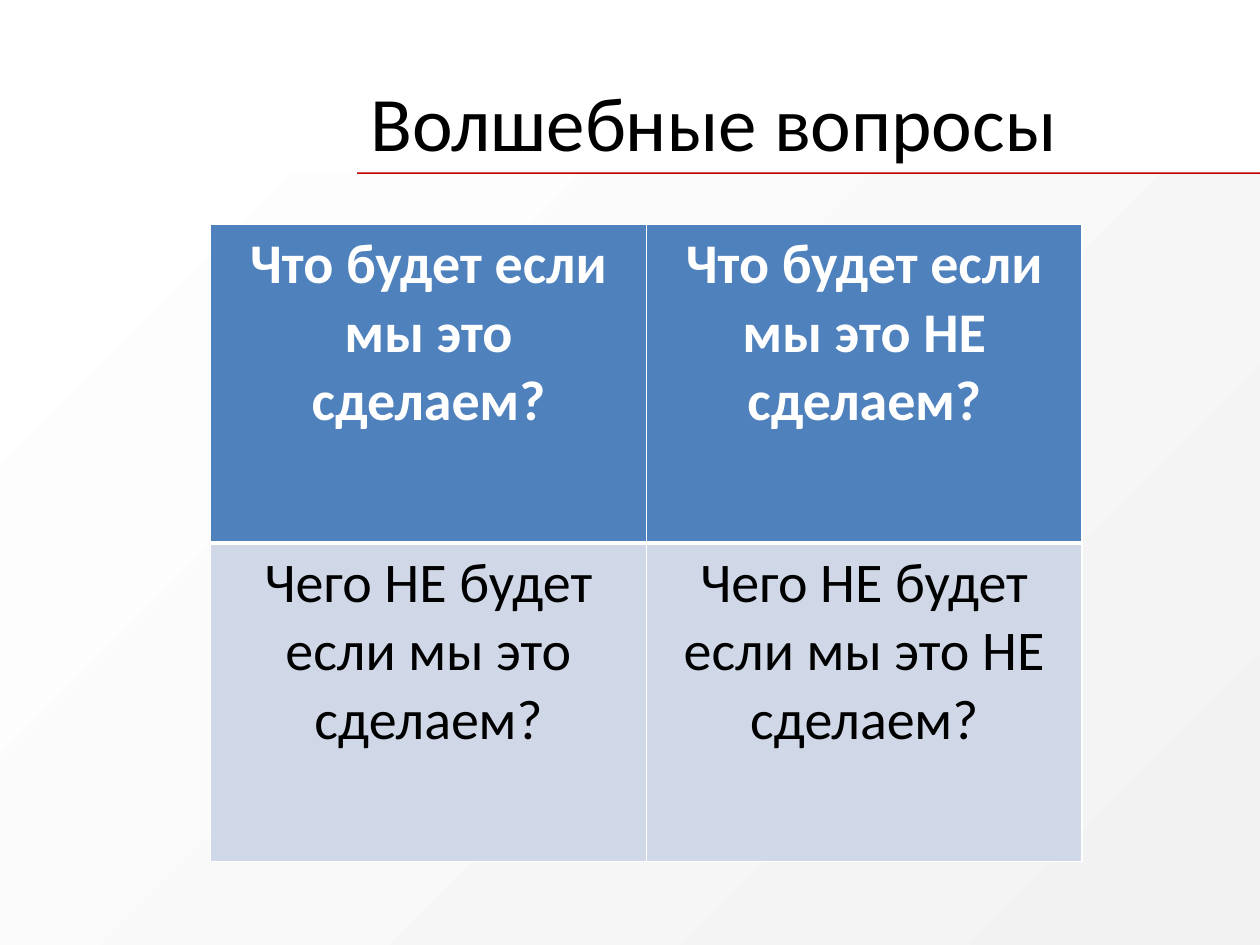
from lxml.etree import SubElement
from pptx import Presentation
from pptx.dml.color import RGBColor
from pptx.enum.shapes import MSO_SHAPE
from pptx.enum.text import MSO_ANCHOR, PP_ALIGN
from pptx.oxml.ns import qn
from pptx.util import Pt

QUESTIONS = [
    ["Что будет если мы это сделаем?", "Что будет если мы это НЕ сделаем?"],
    ["Чего НЕ будет если мы это сделаем?", "Чего НЕ будет если мы это НЕ сделаем?"],
]
ROW_STYLES = [("4F81BD", "FFFFFF", True), ("D0D8E8", "000000", False)]


def colour(value):
    """Turn a hex string into a colour."""
    return RGBColor.from_string(value)


def write(frame, text, size, ink, bold=False):
    """Write one centred run into a text frame."""
    paragraph = frame.paragraphs[0]
    paragraph.alignment = PP_ALIGN.CENTER
    run = paragraph.add_run()
    run.text = text
    run.font.name = "Calibri"
    run.font.size = Pt(size)
    run.font.bold = bold
    run.font.color.rgb = colour(ink)


def add_band(slide, box):
    """Add a plain rectangle without line or shadow."""
    band = slide.shapes.add_shape(MSO_SHAPE.RECTANGLE, *map(Pt, box))
    band.shadow.inherit = False
    band.line.fill.background()
    return band


def add_backdrop(slide, box):
    """Shade the lower part of the slide diagonally."""
    fill = add_band(slide, box).fill
    fill.gradient()
    fill.gradient_angle = 315
    for stop, shade in zip(fill.gradient_stops, ("FFFFFF", "F2F2F2")):
        stop.color.rgb = colour(shade)


def add_title_rule(slide, box):
    """Draw the red rule under the title."""
    fill = add_band(slide, box).fill
    fill.solid()
    fill.fore_color.rgb = colour("C00000")


def place_title(slide, box, text):
    """Place and format the title placeholder."""
    title = slide.shapes.title
    title.left, title.top, title.width, title.height = map(Pt, box)
    title.text_frame.word_wrap = True
    title.text_frame.vertical_anchor = MSO_ANCHOR.MIDDLE
    write(title.text_frame, text, 44, "000000")


def add_border(cell, side, width):
    """Give one side of a cell a white border."""
    line = SubElement(cell._tc.get_or_add_tcPr(), qn(f"a:{side}"), w=str(Pt(width)))
    SubElement(SubElement(line, qn("a:solidFill")), qn("a:srgbClr"), val="FFFFFF")


def add_questions(slide, box):
    """Add the two by two table of questions."""
    left, top, width, height = box
    rows, columns = len(QUESTIONS), len(QUESTIONS[0])
    table = slide.shapes.add_table(rows, columns, *map(Pt, box)).table
    for column in table.columns:
        column.width = Pt(width / columns)
    for row in table.rows:
        row.height = Pt(height / rows)
    for r, (questions, (shade, ink, bold)) in enumerate(zip(QUESTIONS, ROW_STYLES)):
        for c, question in enumerate(questions):
            cell = table.cell(r, c)
            top_width, bottom_width = (1, 3) if r == 0 else (3, 1)
            for side, weight in zip(("lnL", "lnR", "lnT", "lnB"), (1, 1, top_width, bottom_width)):
                add_border(cell, side, weight)
            cell.fill.solid()
            cell.fill.fore_color.rgb = colour(shade)
            write(cell.text_frame, question, 32, ink, bold)


def main():
    """Build the slide and save it."""
    deck = Presentation()
    deck.slide_width, deck.slide_height = Pt(720), Pt(540)
    slide = deck.slides.add_slide(deck.slide_layouts[5])
    add_title_rule(slide, (204, 98.5, 516, 3.5))
    add_backdrop(slide, (0, 100, 720, 440))
    place_title(slide, (84, 24, 648, 90), "Волшебные вопросы")
    add_questions(slide, (120.4, 128.2, 498, 364))
    deck.save("out.pptx")


if __name__ == "__main__":
    main()
